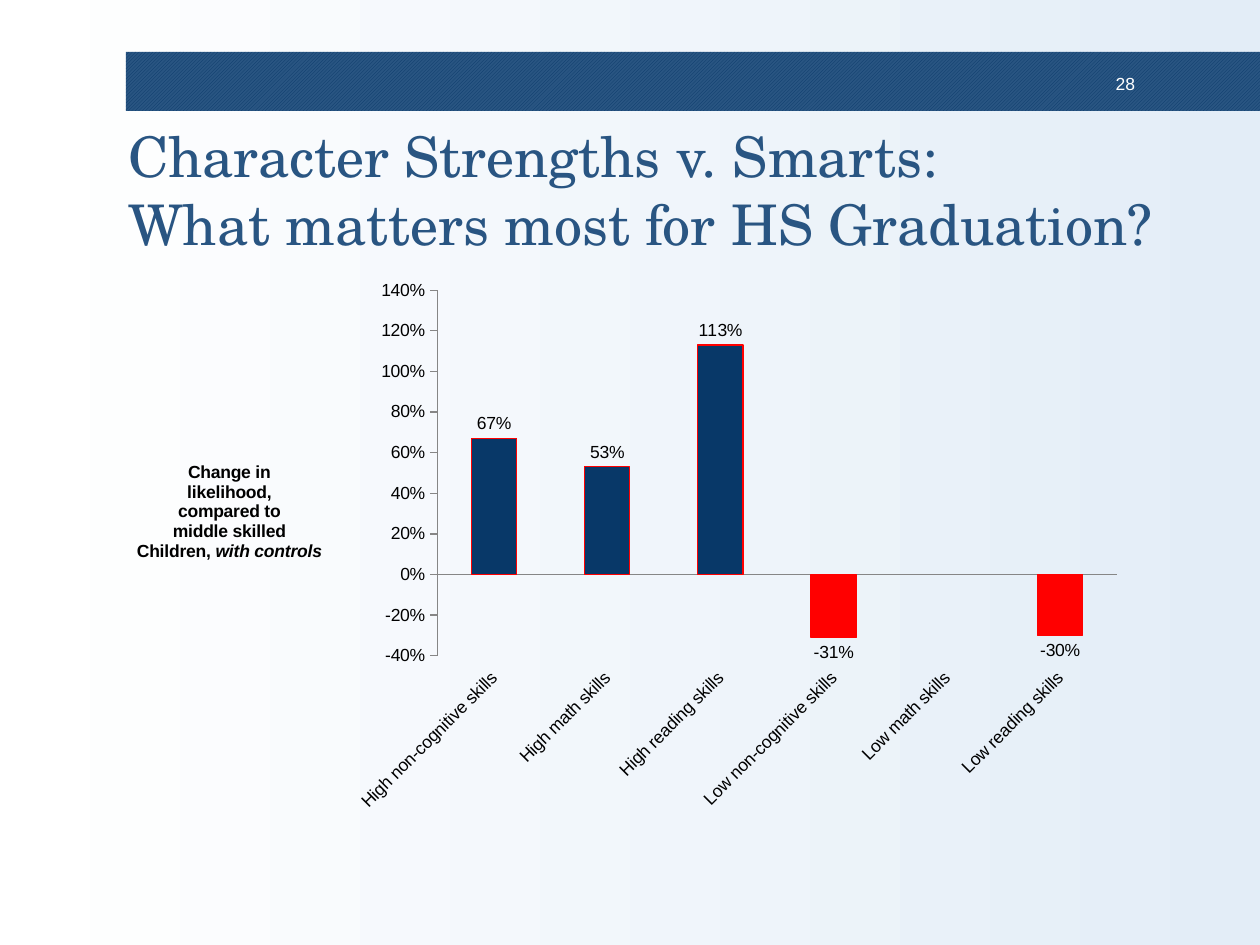
from pptx import Presentation
from pptx.chart.data import CategoryChartData
from pptx.dml.color import RGBColor as RGB
from pptx.enum.chart import XL_CHART_TYPE as ChartType
from pptx.enum.chart import XL_LABEL_POSITION as LabelPos
from pptx.enum.chart import XL_TICK_LABEL_POSITION as TickLabelPos
from pptx.enum.chart import XL_TICK_MARK as TickMark
from pptx.enum.dml import MSO_PATTERN as Pattern
from pptx.enum.shapes import MSO_SHAPE as Shape
from pptx.enum.text import MSO_ANCHOR as Anchor
from pptx.enum.text import PP_ALIGN as Align
from pptx.oxml import parse_xml
from pptx.oxml.ns import nsdecls, qn
from pptx.util import Emu, Pt


class Theme:
    white = RGB.from_string("FFFFFF")
    pale = RGB.from_string("E3EDF7")
    navy = RGB.from_string("083868")
    blue = RGB.from_string("295582")
    red = RGB.from_string("FF0000")
    black = RGB.from_string("000000")
    axis = RGB.from_string("868686")
    heading_font, body_font = "TeX Gyre Schola", "Arial"
    heading_size, body_size = Pt(32), Pt(10)


def px(*lengths):
    return [Emu(round(length * 914400 / 126)) for length in lengths]


def set_layout(parent, index, target="", **fractions):
    """Give a chart part a manual layout, in fractions of the chart."""
    for old in parent.findall(qn("c:layout")):
        parent.remove(old)
    inner = f'<c:layoutTarget val="{target}"/>' if target else ""
    inner += '<c:xMode val="edge"/><c:yMode val="edge"/>'
    inner += "".join(f'<c:{key} val="{value}"/>' for key, value in fractions.items())
    parent.insert(index, parse_xml(
        f'<c:layout {nsdecls("c")}><c:manualLayout>{inner}</c:manualLayout></c:layout>'))


deck = Presentation()
deck.slide_width, deck.slide_height = px(1260, 945)
slide = deck.slides.add_slide(deck.slide_layouts[5])

# Background gradient
backdrop = slide.background.fill
backdrop.gradient()
backdrop.gradient_angle = 0
for stop, color in zip(backdrop.gradient_stops, (Theme.white, Theme.pale)):
    stop.color.rgb = color

# Header band
band = slide.shapes.add_shape(Shape.RECTANGLE, *px(126, 52, 1134, 59))
band.shadow.inherit = False
band.fill.patterned()
band.fill.pattern = Pattern.LIGHT_UPWARD_DIAGONAL
band.fill.fore_color.rgb = Theme.navy
band.fill.back_color.rgb = Theme.blue
band.line.fill.background()

# Slide number
number = slide.shapes.add_textbox(*px(1092, 68, 52, 29)).text_frame
number.word_wrap = True
number.margin_left, number.margin_right, number.margin_top, number.margin_bottom = px(9, 9, 5, 5)
number.text = "28"
number.paragraphs[0].alignment = Align.RIGHT
number_font = number.paragraphs[0].runs[0].font
number_font.name, number_font.size = Theme.body_font, Theme.body_size
number_font.color.rgb = Theme.white

# Title
title = slide.shapes.title
title.left, title.top, title.width, title.height = px(123, 118, 1042, 142)
heading = title.text_frame
heading.vertical_anchor = Anchor.MIDDLE
heading.margin_left, heading.margin_right, heading.margin_top, heading.margin_bottom = px(5, 5, 5, 5)
heading.text = "Character Strengths v. Smarts:\vWhat matters most for HS Graduation?"
heading.paragraphs[0].alignment = Align.LEFT
for run in heading.paragraphs[0].runs:
    run.font.name, run.font.size = Theme.heading_font, Theme.heading_size
    run.font.color.rgb = Theme.blue

# Graduation chart
changes = {
    "High non-cognitive skills": 0.67,
    "High math skills": 0.53,
    "High reading skills": 1.13,
    "Low non-cognitive skills": -0.31,
    "Low math skills": None,
    "Low reading skills": -0.3,
}
data = CategoryChartData(number_format="0%")
data.categories = list(changes)
data.add_series("Series 1", list(changes.values()))
chart = slide.shapes.add_chart(ChartType.COLUMN_CLUSTERED, *px(123, 268, 1014, 554), data).chart
chart.has_legend = chart.has_title = False
chart.font.name, chart.font.size = Theme.body_font, Theme.body_size
chart.font.color.rgb = Theme.black
plot_area = chart.plots[0]._element.getparent()
set_layout(plot_area, 0, "inner", x=0.31, y=0.04, w=0.67, h=0.66)

# Columns: red where the likelihood falls
plot = chart.plots[0]
plot.gap_width = 150
plot.vary_by_categories = False
columns = plot.series[0]
columns.invert_if_negative = False
columns.format.fill.solid()
columns.format.fill.fore_color.rgb = Theme.navy
columns.format.line.color.rgb = Theme.red
columns.format.line.width = Pt(0.75)
for index, change in enumerate(changes.values()):
    if change is not None and change < 0:
        drop = columns.points[index].format
        drop.fill.solid()
        drop.fill.fore_color.rgb = Theme.red
        drop.line.color.rgb = Theme.red
        drop.line.width = Pt(0.75)

# Column labels
labels = columns.data_labels
labels.show_value = True
labels.position = LabelPos.OUTSIDE_END
labels.number_format, labels.number_format_is_linked = "0%", False
labels.font.name, labels.font.size = Theme.body_font, Theme.body_size
labels.font.color.rgb = Theme.black

# Axes
skills, likelihood = chart.category_axis, chart.value_axis
for axis, mark in ((skills, TickMark.NONE), (likelihood, TickMark.OUTSIDE)):
    axis.has_major_gridlines = False
    axis.major_tick_mark, axis.minor_tick_mark = mark, TickMark.NONE
    axis.format.line.color.rgb = Theme.axis
    axis.format.line.width = Pt(0.75)
    axis.tick_labels.font.size = Theme.body_size
skills.tick_label_position = TickLabelPos.LOW
skills._element.find(qn("c:txPr")).find(qn("a:bodyPr")).set("rot", "-2700000")
likelihood.minimum_scale, likelihood.maximum_scale = -0.4, 1.4
likelihood.major_unit = 0.2
likelihood.tick_labels.number_format = "0%"
likelihood.tick_labels.number_format_is_linked = False

# Value axis title, set horizontally
caption = likelihood.axis_title.text_frame
caption.text = "Change in\nlikelihood,\ncompared to\nmiddle skilled\nChildren, "
caption.paragraphs[-1].add_run().text = "with controls"
for line in caption.paragraphs:
    line.alignment = Align.CENTER
    for run in line.runs:
        run.font.name, run.font.size = Theme.body_font, Theme.body_size
        run.font.bold = True
        run.font.italic = run.text == "with controls"
        run.font.color.rgb = Theme.black
caption._txBody.find(qn("a:bodyPr")).set("rot", "0")
caption._txBody.find(qn("a:bodyPr")).set("vert", "horz")
set_layout(likelihood.axis_title._element, 1, x=0.01, y=0.34)

deck.save("out.pptx")
